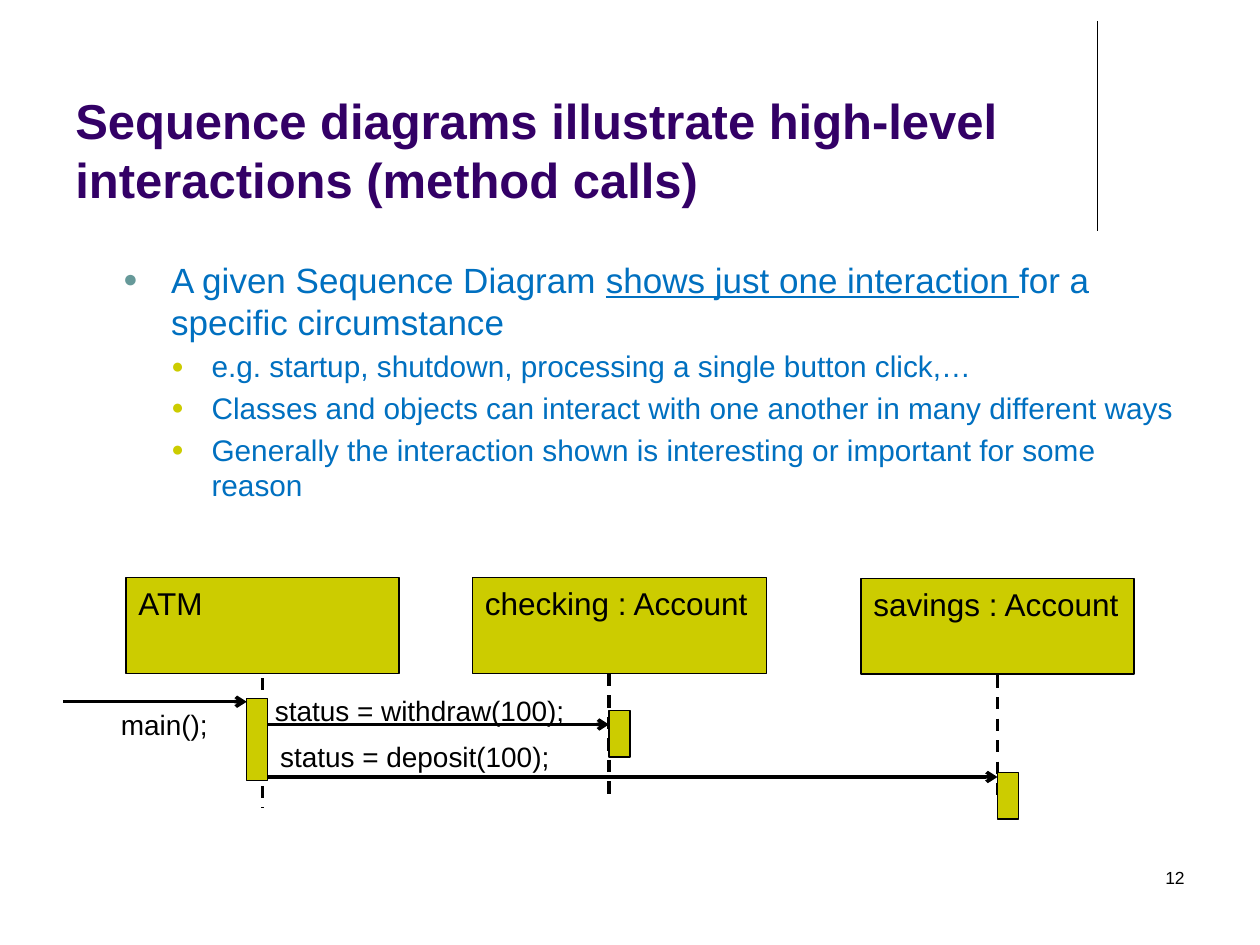
from lxml.etree import SubElement
from pptx import Presentation
from pptx.dml.color import RGBColor
from pptx.enum.dml import MSO_LINE_DASH_STYLE as DASH
from pptx.enum.shapes import MSO_CONNECTOR as CONNECTOR, MSO_SHAPE as SHAPE
from pptx.enum.text import MSO_ANCHOR as ANCHOR, MSO_AUTO_SIZE as AUTO_SIZE, PP_ALIGN as ALIGN
from pptx.oxml.ns import qn
from pptx.util import Pt

COLORS = {
    "title": "330066",
    "body": "0070C0",
    "teal": "669999",
    "olive": "CCCC00",
    "black": "000000",
}


def write_text(paragraph, text, size=16, color="black", bold=False, underline=False):
    run = paragraph.add_run()
    run.text = text
    run.font.name = "Arial"
    run.font.size = Pt(size)
    run.font.bold = bold
    run.font.underline = underline
    run.font.color.rgb = RGBColor.from_string(COLORS[color])


def add_line(x1, y1, x2, y2, width, dashed=False, arrow=False):
    line = slide.shapes.add_connector(CONNECTOR.STRAIGHT, Pt(x1), Pt(y1), Pt(x2), Pt(y2))
    line.line.width = Pt(width)
    line.line.color.rgb = RGBColor.from_string(COLORS["black"])
    if dashed:
        line.line.dash_style = DASH.DASH
    if arrow:
        SubElement(line.line._get_or_add_ln(), qn("a:tailEnd"), type="arrow")
    SubElement(line._element.spPr, qn("a:effectLst"))


presentation = Presentation()
presentation.slide_width, presentation.slide_height = Pt(720), Pt(540)
slide = presentation.slides.add_slide(presentation.slide_layouts[6])

# Title and the rule beside it
add_line(627, 12, 627, 132, 0.75)
title = slide.shapes.add_textbox(Pt(36), Pt(18), Pt(594), Pt(104.4)).text_frame
title.word_wrap = True
title.vertical_anchor = ANCHOR.BOTTOM
write_text(title.paragraphs[0],
           "Sequence diagrams illustrate high-level interactions (method calls)",
           size=28, color="title", bold=True)

# Bulleted text: level, then runs with their underline
bullets = [
    (1, [("A given Sequence Diagram ", False), ("shows just one interaction ", True),
         ("for a specific circumstance", False)]),
    (2, [("e.g. startup, shutdown, processing a single button click,…", False)]),
    (2, [("Classes and objects can interact with one another in many different ways", False)]),
    (2, [("Generally the interaction shown is interesting or important for some reason", False)]),
]
# Level: text size, left margin, hanging indent, bullet colour
levels = {1: (20, 54.7, 27.4, "teal"), 2: (17, 77.8, 23, "olive")}
body = slide.shapes.add_textbox(Pt(36), Pt(144), Pt(648), Pt(291)).text_frame
body.word_wrap = True
for index, (level, runs) in enumerate(bullets):
    size, margin, hanging, bullet_color = levels[level]
    paragraph = body.add_paragraph() if index else body.paragraphs[0]
    paragraph.level = level - 1
    paragraph.space_before = Pt(size * 0.2 if index else 0)
    properties = paragraph._p.get_or_add_pPr()
    properties.set("marL", str(Pt(margin)))
    properties.set("indent", str(-Pt(hanging)))
    color_element = SubElement(properties, qn("a:buClr"))
    SubElement(color_element, qn("a:srgbClr"), val=COLORS[bullet_color])
    SubElement(properties, qn("a:buSzPct"), val="70000")
    SubElement(properties, qn("a:buFont"), typeface="Arial")
    SubElement(properties, qn("a:buChar"), char="●")
    for text, underline in runs:
        write_text(paragraph, text, size=size, color="body", underline=underline)

# Slide number
number = slide.shapes.add_textbox(Pt(516), Pt(492), Pt(168), Pt(36)).text_frame
number.word_wrap = True
number.paragraphs[0].alignment = ALIGN.RIGHT
write_text(number.paragraphs[0], "12", size=10)

# Lifelines
for x, top, bottom in [(150, 387.5, 462), (348, 385, 457), (570, 386, 458)]:
    add_line(x, top, x, bottom, 1.75, dashed=True)

# Messages
for start, end, y in [(36, 141, 401), (150, 348, 414), (150, 570, 444)]:
    add_line(start, y, end, y, 2, arrow=True)

# Message labels
labels = [
    ("main();", 62, 401, 65),
    ("status = withdraw(100);", 150, 392.5, 182),
    ("status = deposit(100);", 153, 419, 171),
]
for text, left, top, width in labels:
    label = slide.shapes.add_textbox(Pt(left), Pt(top), Pt(width), Pt(26.6)).text_frame
    label.word_wrap = False
    label.auto_size = AUTO_SIZE.SHAPE_TO_FIT_TEXT
    write_text(label.paragraphs[0], text)

# Participants and their activation bars
boxes = [
    ("ATM", 72, 330, 156, 54.7),
    ("checking : Account", 270, 330, 168, 54.7),
    ("savings : Account", 492, 330.5, 156, 54.7),
    ("", 141, 399, 12, 47),
    ("", 348, 406, 12, 26.6),
    ("", 570, 441.5, 12, 26.6),
]
for text, left, top, width, height in boxes:
    box = slide.shapes.add_shape(SHAPE.RECTANGLE, Pt(left), Pt(top), Pt(width), Pt(height))
    box.shadow.inherit = False
    box.fill.solid()
    box.fill.fore_color.rgb = RGBColor.from_string(COLORS["olive"])
    box.line.color.rgb = RGBColor.from_string(COLORS["black"])
    box.line.width = Pt(0.75)
    if text:
        box.text_frame.word_wrap = False
        box.text_frame.vertical_anchor = ANCHOR.TOP
        box.text_frame.paragraphs[0].alignment = ALIGN.LEFT
        write_text(box.text_frame.paragraphs[0], text, size=18)

presentation.save("out.pptx")
